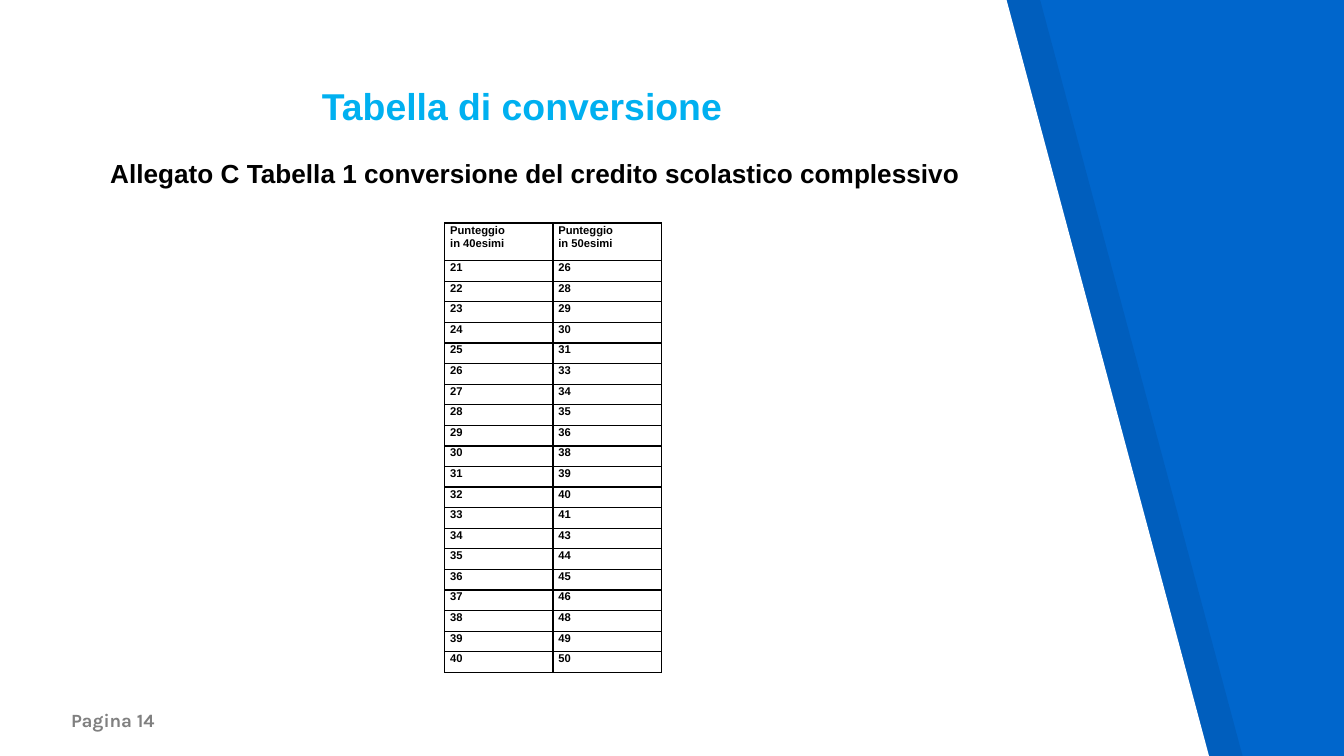
from lxml import etree
from pptx import Presentation
from pptx.dml.color import RGBColor
from pptx.enum import text as tx
from pptx.oxml import ns
from pptx.util import Inches, Pt

BLUE = RGBColor(0x00, 0x66, 0xCC)
CYAN = RGBColor(0x00, 0xB0, 0xF0)
GRAY = RGBColor(0x80, 0x80, 0x80)
BLACK = RGBColor(0, 0, 0)
WHITE = RGBColor(255, 255, 255)


class Page:
    font = "Arial"
    pad = 0.1

    def __init__(self, slide):
        self.slide = slide
        fill = slide.background.fill
        fill.solid()
        fill.fore_color.rgb = BLUE

    def panel(self, left, color, alpha=None):
        pen = self.slide.shapes.build_freeform(
            Inches(left), Inches(-0.01), scale=1.0)
        pen.add_line_segments([
            (Inches(left + x), Inches(y))
            for x, y in [(0, 5.64), (9, 5.64), (7.49, 0)]])
        shape = pen.convert_to_shape()
        shape.shadow.inherit = False
        shape.line.fill.background()
        shape.fill.solid()
        shape.fill.fore_color.rgb = color
        if alpha:
            node = shape._element.spPr.find(".//" + ns.qn("a:srgbClr"))
            etree.SubElement(node, ns.qn("a:alpha"), val=str(alpha * 1000))

    def style(self, para, size, color, font=None):
        for run in para.runs:
            run.font.name = font or self.font
            run.font.size = Pt(size)
            run.font.bold = True
            run.font.color.rgb = color

    def frame(self, shape, box, words, size, color, align=None,
              anchor=tx.MSO_ANCHOR.TOP, font=None):
        shape.left, shape.top, shape.width, shape.height = map(Inches, box)
        frame = shape.text_frame
        frame.text = words
        frame.word_wrap = True
        frame.auto_size = tx.MSO_AUTO_SIZE.NONE
        frame.vertical_anchor = anchor
        frame.margin_left = frame.margin_right = Inches(self.pad)
        frame.margin_top = frame.margin_bottom = Inches(self.pad)
        para = frame.paragraphs[0]
        para.alignment = align
        para.space_before = Pt(0)
        self.style(para, size, color, font)
        return para

    def label(self, box, words, size, color, font):
        shape = self.slide.shapes.add_textbox(0, 0, 0, 0)
        self.frame(shape, box, words, size, color,
                   anchor=tx.MSO_ANCHOR.BOTTOM, font=font)

    def holder(self, index, box, words, size, color, align):
        shape = self.slide.placeholders[index]
        self.slide.shapes._spTree.append(shape._element)
        para = self.frame(shape, box, words, size, color, align)
        props = para._p.get_or_add_pPr()
        props.set("marL", "0")
        props.set("indent", "0")
        etree.SubElement(props, ns.qn("a:buNone"))

    def border(self, cell):
        props = cell._tc.get_or_add_tcPr()
        for at, side in enumerate(("lnL", "lnR", "lnT", "lnB")):
            line = etree.Element(ns.qn("a:" + side), w=str(Pt(0.75)))
            fill = etree.SubElement(line, ns.qn("a:solidFill"))
            etree.SubElement(fill, ns.qn("a:srgbClr"), val=str(BLACK))
            props.insert(at, line)

    def cell(self, cell, words, after):
        cell.text = words
        cell.fill.background()
        cell.margin_left = cell.margin_right = Inches(0.04)
        cell.margin_top = cell.margin_bottom = 0
        for para in cell.text_frame.paragraphs:
            para.line_spacing = 1.07
            para.space_after = Pt(after)
            self.style(para, 6, BLACK)
        self.border(cell)

    def table(self, box, rows, head):
        height = box[-1]
        grid = self.slide.shapes.add_table(
            len(rows), len(rows[0]), *map(Inches, box)).table
        grid.first_row = False
        grid.horz_banding = False
        step = (height - head) / (len(rows) - 1)
        for r, row in enumerate(rows):
            grid.rows[r].height = Inches(step if r else head)
            for c, words in enumerate(row):
                self.cell(grid.cell(r, c), words, 8 if r else 0)


def main():
    deck = Presentation()
    deck.slide_width, deck.slide_height = Inches(10), Inches(10 * 9 / 16)
    page = Page(deck.slides.add_slide(deck.slide_layouts[1]))
    page.panel(0.25, BLACK, 7)
    page.panel(0, WHITE)
    page.label((0.43, 5.09, 6.18, 0.45), "Pagina 14", 10, GRAY, "Karla")
    page.holder(0, (0.54, 0.52, 6.69, 0.48), "Tabella di conversione",
                20, CYAN, tx.PP_ALIGN.CENTER)
    page.holder(1, (0.72, 1.07, 7.16, 3.83),
                "Allegato C Tabella 1 conversione del credito "
                "scolastico complessivo", 14, BLACK, tx.PP_ALIGN.JUSTIFY)
    rows = [("Punteggio\nin 40esimi", "Punteggio\nin 50esimi")]
    rows += [(str(n), str(int(n * 50 / 40 + 0.5))) for n in range(21, 41)]
    page.table((3.31, 1.66, 1.61, 3.35), rows, 0.28)
    deck.save("out.pptx")


if __name__ == "__main__":
    main()
